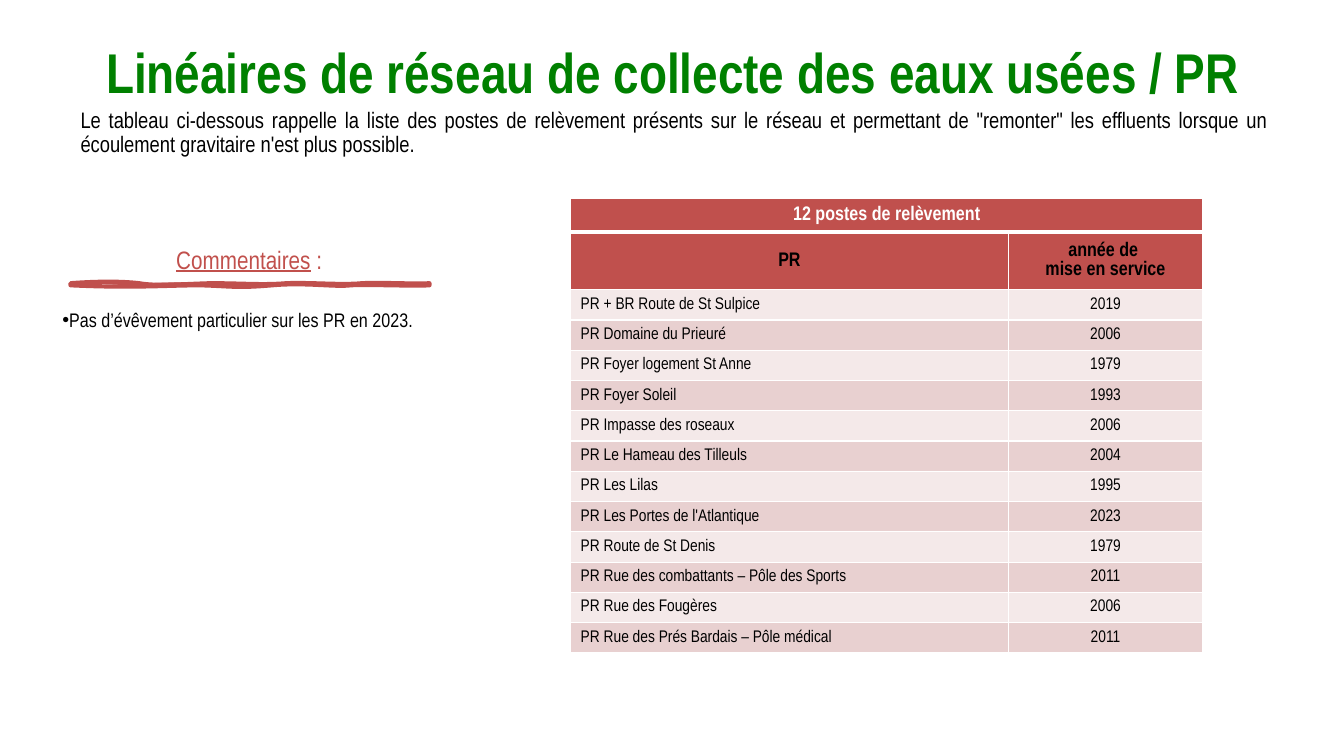
import pptx
import pptx.util
import pptx.dml.color
import pptx.enum.text
import pptx.oxml
import pptx.oxml.ns
import lxml.etree

Inches, Pt = pptx.util.Inches, pptx.util.Pt
ALIGN = pptx.enum.text.PP_ALIGN
ANCHOR = pptx.enum.text.MSO_ANCHOR
qn = pptx.oxml.ns.qn

THEME = {
    "font": "Arial Narrow", "bullet": "Arial",
    "black": "000000", "white": "FFFFFF", "green": "008000",
    "red": "C0504D", "label": "C1504C", "bands": ("F4E9E9", "E8D0D0"),
    "title": 40, "heading": 18, "intro": 16, "body": 14, "cell": 12,
}

TEXTS = [
    {"box": (0.52, 3.03, 4.63, 1.48), "bullet": True,
     "runs": [("Pas d’évêvement particulier sur les PR en 2023.", {})],
     "size": "body", "color": "black",
     "para": {"alignment": ALIGN.JUSTIFY, "line_spacing": 0.9, "space_after": Pt(6)}},
    {"box": (0.92, 0.4, 11.5, 0.79),
     "runs": [("Linéaires de réseau de collecte des eaux usées / PR", {"bold": True})],
     "size": "title", "color": "green",
     "para": {"alignment": ALIGN.CENTER, "line_spacing": 0.9}},
    {"box": (1.65, 2.37, 1.66, 0.4), "wrap": False,
     "runs": [("Commentaires", {"underline": True}), (" :", {})],
     "size": "heading", "color": "label", "para": {}},
    {"box": (0.7, 1.03, 11.98, 0.59),
     "runs": [("Le tableau ci-dessous rappelle la liste des postes de relèvement présents "
               "sur le réseau et permettant de \"remonter\" les effluents lorsque un "
               "écoulement gravitaire n'est plus possible.", {})],
     "size": "intro", "color": "black",
     "para": {"alignment": ALIGN.JUSTIFY, "line_spacing": 0.9, "space_after": Pt(6)}},
]

TABLE_TITLE = "12 postes de relèvement"
HEADERS = ("PR", "année de \nmise en service")
STATIONS = [
    ("PR + BR Route de St Sulpice", "2019"),
    ("PR Domaine du Prieuré", "2006"),
    ("PR Foyer logement St Anne", "1979"),
    ("PR Foyer Soleil", "1993"),
    ("PR Impasse des roseaux", "2006"),
    ("PR Le Hameau des Tilleuls", "2004"),
    ("PR Les Lilas", "1995"),
    ("PR Les Portes de l'Atlantique", "2023"),
    ("PR Route de St Denis", "1979"),
    ("PR Rue des combattants – Pôle des Sports", "2011"),
    ("PR Rue des Fougères", "2006"),
    ("PR Rue des Prés Bardais – Pôle médical", "2011"),
]
TABLE_AT = (5.66, 1.97)
COLS = (4.34, 1.93)
ROWS = [0.33, 0.57] + [0.3] * len(STATIONS)

STROKE_BOX = (0.7, 2.81, 3.56, 0.02)
STROKE_EDGE = [
    (0.97, 2.79, 1.21, 2.79, 1.38, 2.81), (1.55, 2.84, 1.77, 2.82, 2.09, 2.81),
    (2.41, 2.81, 2.6, 2.83, 2.84, 2.81), (3.08, 2.8, 3.39, 2.83, 3.59, 2.81),
    (3.79, 2.8, 4.12, 2.82, 4.26, 2.81), (4.26, 2.82, 4.26, 2.83, 4.26, 2.83),
    (4.08, 2.84, 3.64, 2.82, 3.48, 2.83), (3.32, 2.85, 3.04, 2.8, 2.7, 2.83),
    (2.35, 2.86, 2.31, 2.84, 1.99, 2.83), (1.66, 2.83, 1.32, 2.86, 0.7, 2.83),
    (0.7, 2.83, 0.7, 2.82, 0.7, 2.81),
]
STROKE_BODY = [
    (1.02, 2.84, 1.1, 2.82, 1.38, 2.81), (1.66, 2.81, 1.69, 2.79, 1.99, 2.81),
    (2.28, 2.84, 2.61, 2.83, 2.77, 2.81), (2.93, 2.8, 3.27, 2.84, 3.44, 2.81),
    (3.62, 2.79, 3.97, 2.85, 4.26, 2.81), (4.26, 2.82, 4.26, 2.83, 4.26, 2.83),
    (4.12, 2.83, 3.72, 2.86, 3.55, 2.83), (3.38, 2.81, 3.09, 2.84, 2.77, 2.83),
    (2.44, 2.83, 2.4, 2.82, 2.16, 2.83), (1.93, 2.85, 1.79, 2.83, 1.45, 2.83),
    (1.11, 2.84, 0.92, 2.83, 0.7, 2.83), (0.7, 2.83, 0.7, 2.82, 0.7, 2.81),
]
STROKE_PATHS = [(STROKE_EDGE, {"fill": "none"}), (STROKE_BODY, {"stroke": "0"})]


def rgb(value):
    return pptx.dml.color.RGBColor.from_string(value)


def apply(obj, values):
    for name, value in values.items():
        setattr(obj, name, value)


def add_xml(parent, tag, **attrs):
    return lxml.etree.SubElement(parent, qn(f"a:{tag}"), attrs)


def style_run(r, size, color, **extra):
    apply(r.font, {"name": THEME["font"], "size": Pt(THEME[size]), **extra})
    r.font.color.rgb = rgb(THEME[color])


def add_text(s, item):
    tf = s.shapes.add_textbox(*map(Inches, item["box"])).text_frame
    tf.word_wrap = item.get("wrap", True)
    p = tf.paragraphs[0]
    apply(p, item["para"])
    for text, extra in item["runs"]:
        r = p.add_run()
        r.text = text
        style_run(r, item["size"], item["color"], **extra)
    if item.get("bullet"):
        pPr = p._p.get_or_add_pPr()
        pPr.set("marL", "0")
        pPr.set("indent", str(-Inches(0.25)))
        add_xml(pPr, "buFont", typeface=THEME["bullet"])
        add_xml(pPr, "buChar", char="•")


def add_stroke(s):
    left, top, width, height = map(Inches, STROKE_BOX)
    builder = s.shapes.build_freeform(left, top)
    builder.add_line_segments([(left + width, top), (left + width, top + height)])
    sp = builder.convert_to_shape()
    sp.shadow.inherit = False
    sp.fill.solid()
    sp.fill.fore_color.rgb = rgb(THEME["red"])
    sp.line.color.rgb = rgb(THEME["red"])
    sp.line.width = Pt(3)
    outlines = sp._element.spPr.find(".//" + qn("a:pathLst"))
    outlines.clear()
    for curves, attrs in STROKE_PATHS:
        outline = add_xml(outlines, "path", w=str(width), h=str(height), **attrs)
        add_xml(add_xml(outline, "moveTo"), "pt", x="0", y="0")
        for curve in curves:
            bezier = add_xml(outline, "cubicBezTo")
            for x, y in zip(curve[::2], curve[1::2]):
                add_xml(bezier, "pt", x=str(Inches(x) - left), y=str(Inches(y) - top))
        add_xml(outline, "close")


def set_borders(cell, widths):
    tcPr = cell._tc.get_or_add_tcPr()
    for i, (side, width) in enumerate(zip("LRTB", widths)):
        ln = add_xml(tcPr, f"ln{side}", w=str(Pt(width)))
        add_xml(add_xml(ln, "solidFill"), "srgbClr", val=THEME["white"])
        tcPr.insert(i, ln)


def fill_cell(cell, text, fill, align, borders, size, color, bold):
    cell.fill.solid()
    cell.fill.fore_color.rgb = rgb(fill)
    cell.vertical_anchor = ANCHOR.MIDDLE
    set_borders(cell, borders)
    cell.text_frame.text = text
    for p in cell.text_frame.paragraphs:
        p.alignment = align
        for r in p.runs:
            style_run(r, size, color, bold=bold)


def add_stations_table(s):
    box = (*TABLE_AT, sum(COLS), sum(ROWS))
    table = s.shapes.add_table(len(ROWS), len(COLS), *map(Inches, box)).table
    for column, width in zip(table.columns, COLS):
        column.width = Inches(width)
    for row, height in zip(table.rows, ROWS):
        row.height = Inches(height)
    table.cell(0, 0).merge(table.cell(0, 1))
    for i, values in enumerate([(TABLE_TITLE,), HEADERS, *STATIONS]):
        head = i < 2
        fill = THEME["red"] if head else THEME["bands"][i % 2]
        borders = (1, 1, 1, 3 if i == 0 else 1)
        for j, text in enumerate(values):
            align = ALIGN.CENTER if head or j else ALIGN.LEFT
            fill_cell(table.cell(i, j), text, fill, align, borders,
                      "body" if head else "cell", "white" if i == 0 else "black", head)


def main():
    prs = pptx.Presentation()
    prs.slide_width, prs.slide_height = Inches(13.33), Inches(7.5)
    s = prs.slides.add_slide(prs.slide_layouts[6])
    add_stroke(s)
    for item in TEXTS:
        add_text(s, item)
    add_stations_table(s)
    prs.save("out.pptx")


if __name__ == "__main__":
    main()
